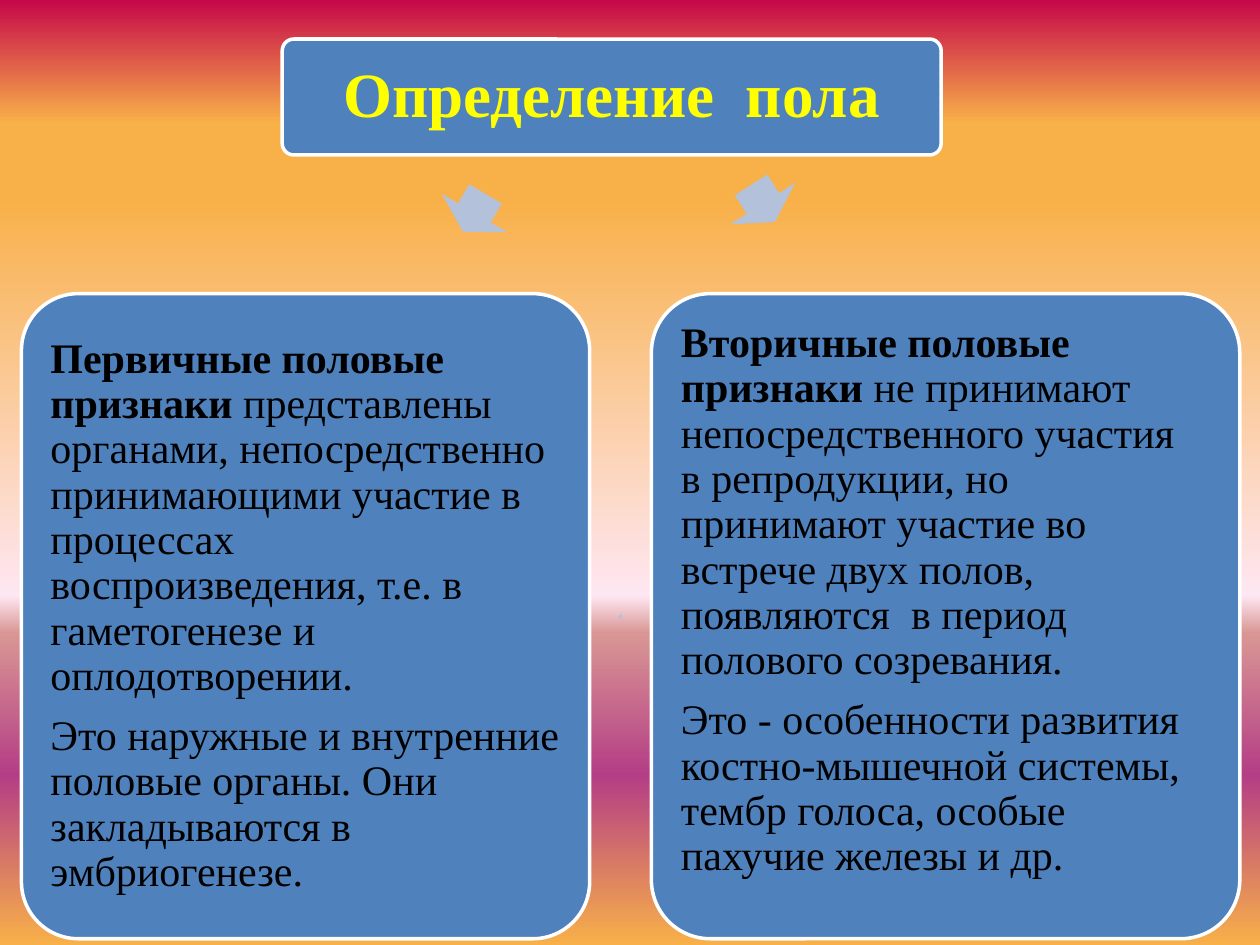
from lxml.etree import SubElement
from pptx import Presentation
from pptx.dml.color import RGBColor
from pptx.enum.shapes import MSO_SHAPE
from pptx.enum.text import MSO_ANCHOR, MSO_AUTO_SIZE, PP_ALIGN
from pptx.oxml.ns import qn
from pptx.util import Inches, Pt


def paint(color_format, color):
    color_format.rgb = RGBColor.from_string(color)


def add_filled_shape(kind, left, top, width, height, color):
    shape = slide.shapes.add_shape(
        kind, int(left * column), int(top * row), int(width * column), int(height * row))
    shape.shadow.inherit = False
    shape.fill.solid()
    paint(shape.fill.fore_color, color)
    shape.line.fill.background()
    return shape


presentation = Presentation()
presentation.slide_width = Inches(10)
presentation.slide_height = Inches(7.5)
column = presentation.slide_width / 100
row = presentation.slide_height / 100
slide = presentation.slides.add_slide(presentation.slide_layouts[5])

background = slide.background.fill
background.gradient()
background.gradient_angle = 270
stop_list = next(slide.element.iter(qn("a:gsLst")))
for stop in list(stop_list):
    stop_list.remove(stop)
for share, color in [(0, "C50849"), (13, "F8B049"), (21, "F8B049"), (63, "FEE7F2"),
                     (67, "D99694"), (82, "B43E85"), (100, "F8B049")]:
    stop = SubElement(stop_list, qn("a:gs"), pos=str(share * 1000))
    SubElement(stop, qn("a:srgbClr"), val=color)

primary = [
    ("Первичные половые признаки",
     " представлены  органами, непосредственно принимающими участие в процессах "
     "воспроизведения, т.е. в гаметогенезе и оплодотворении."),
    ("", "Это наружные и внутренние половые органы. Они закладываются в эмбриогенезе."),
]
secondary = [
    ("Вторичные половые признаки",
     " не принимают непосредственного участия  в репродукции, но принимают участие "
     "во встрече двух полов, появляются  в период полового созревания."),
    ("", "Это - особенности развития костно-мышечной системы, тембр голоса, "
         "особые пахучие железы и др."),
]
cards = [
    (22.4, 4.13, 52.3, 12.27, 0.1, []),
    (51.7, 31.07, 46.7, 68.27, 0.35, secondary),
    (1.7, 31.07, 45.1, 68.27, 0.1, primary),
]
for left, top, width, height, bottom_margin, paragraphs in cards:
    card = add_filled_shape(MSO_SHAPE.ROUNDED_RECTANGLE, left, top, width, height, "4F81BD")
    card.adjustments[0] = 0.1
    paint(card.line.color, "FFFFFF")
    card.line.width = Pt(2)
    text_frame = card.text_frame
    text_frame.word_wrap = True
    text_frame.vertical_anchor = MSO_ANCHOR.MIDDLE
    text_frame.margin_left = text_frame.margin_right = text_frame.margin_top = Inches(0.1)
    text_frame.margin_bottom = Inches(bottom_margin)
    for index, (term, description) in enumerate(paragraphs):
        paragraph = text_frame.add_paragraph() if index else text_frame.paragraphs[0]
        paragraph.alignment = PP_ALIGN.LEFT
        paragraph.line_spacing = 0.9
        paragraph.space_after = Pt(8.4)
        for text, bold in [(term, True), (description, False)]:
            if text:
                run = paragraph.add_run()
                run.text = text
                run.font.name = "Times New Roman"
                run.font.size = Pt(24)
                run.font.bold = bold
                paint(run.font.color, "000000")

arrows = [
    (MSO_SHAPE.RIGHT_ARROW, 58.8, 17.47, 3.5, 8.13, 57.3),
    (MSO_SHAPE.LEFT_RIGHT_ARROW, 49.1, 64.93, 0.3, 0.67, 180),
    (MSO_SHAPE.LEFT_ARROW, 35.9, 18.53, 3.5, 8, 300.5),
]
for kind, left, top, width, height, rotation in arrows:
    arrow = add_filled_shape(kind, left, top, width, height, "B3C1DB")
    arrow.rotation = rotation

title = slide.shapes.title
slide.shapes.element.append(title.element)
title.left, title.top = int(22.7 * column), int(4.53 * row)
title.width, title.height = int(51.7 * column), int(11.47 * row)
text_frame = title.text_frame
text_frame.text = "Определение  пола"
text_frame.word_wrap = True
text_frame.auto_size = MSO_AUTO_SIZE.NONE
text_frame.vertical_anchor = MSO_ANCHOR.MIDDLE
text_frame.margin_left = text_frame.margin_right = Inches(0.15)
text_frame.margin_top = text_frame.margin_bottom = Inches(0.15)
paragraph = text_frame.paragraphs[0]
paragraph.alignment = PP_ALIGN.CENTER
paragraph.line_spacing = 0.9
font = paragraph.runs[0].font
font.name = "Times New Roman"
font.size = Pt(36)
font.bold = True
paint(font.color, "FFFF00")

presentation.save("out.pptx")
